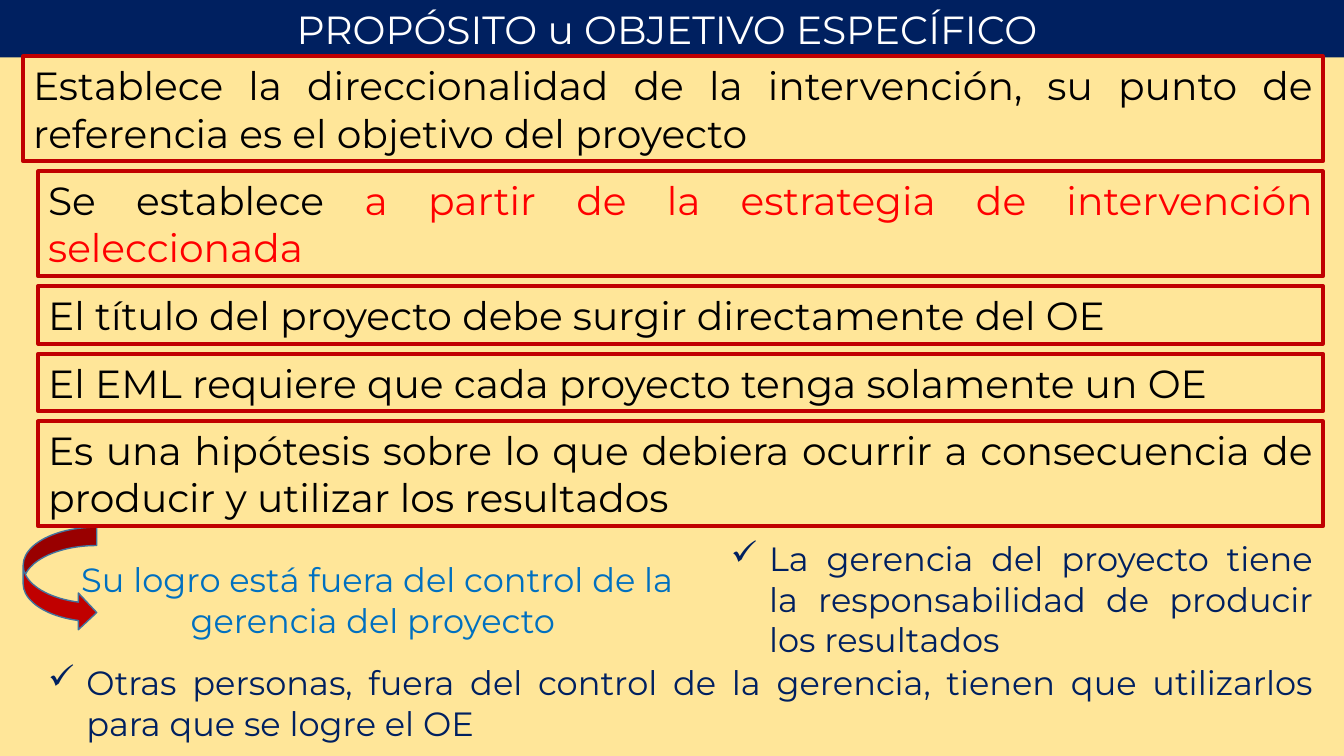
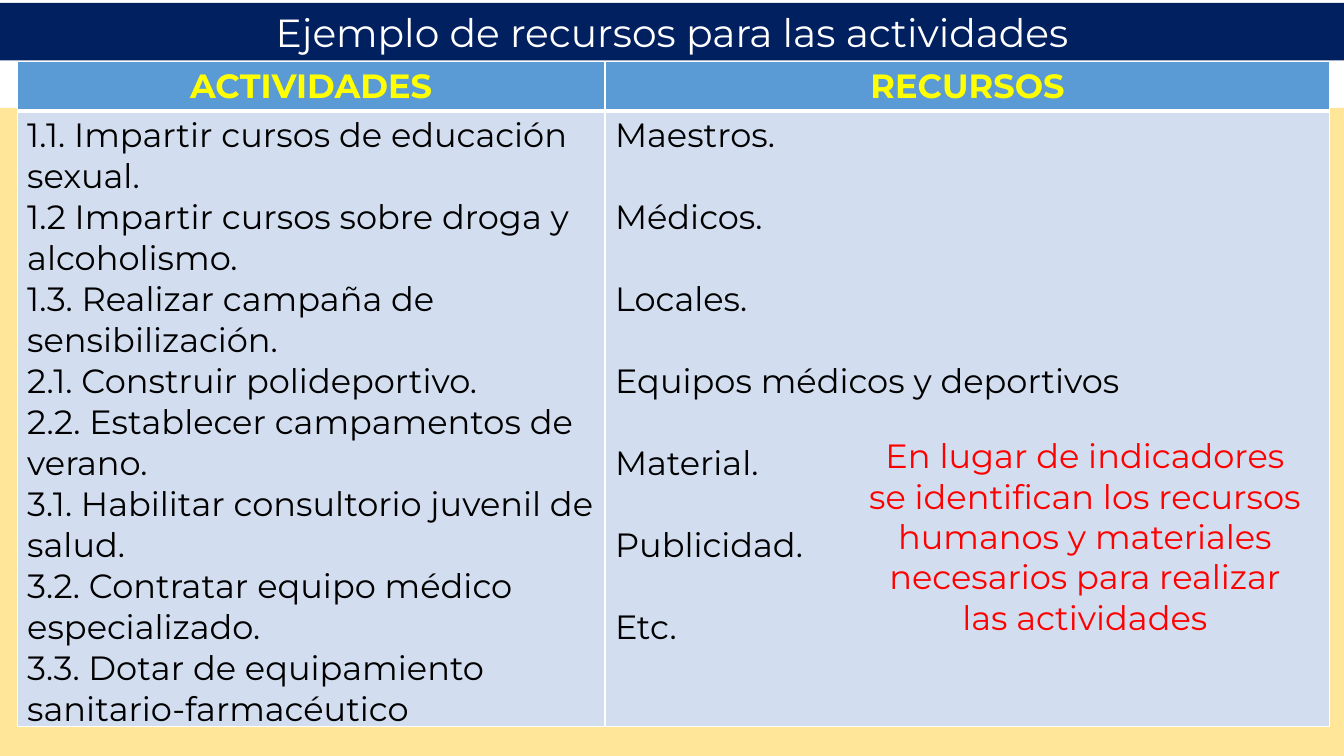
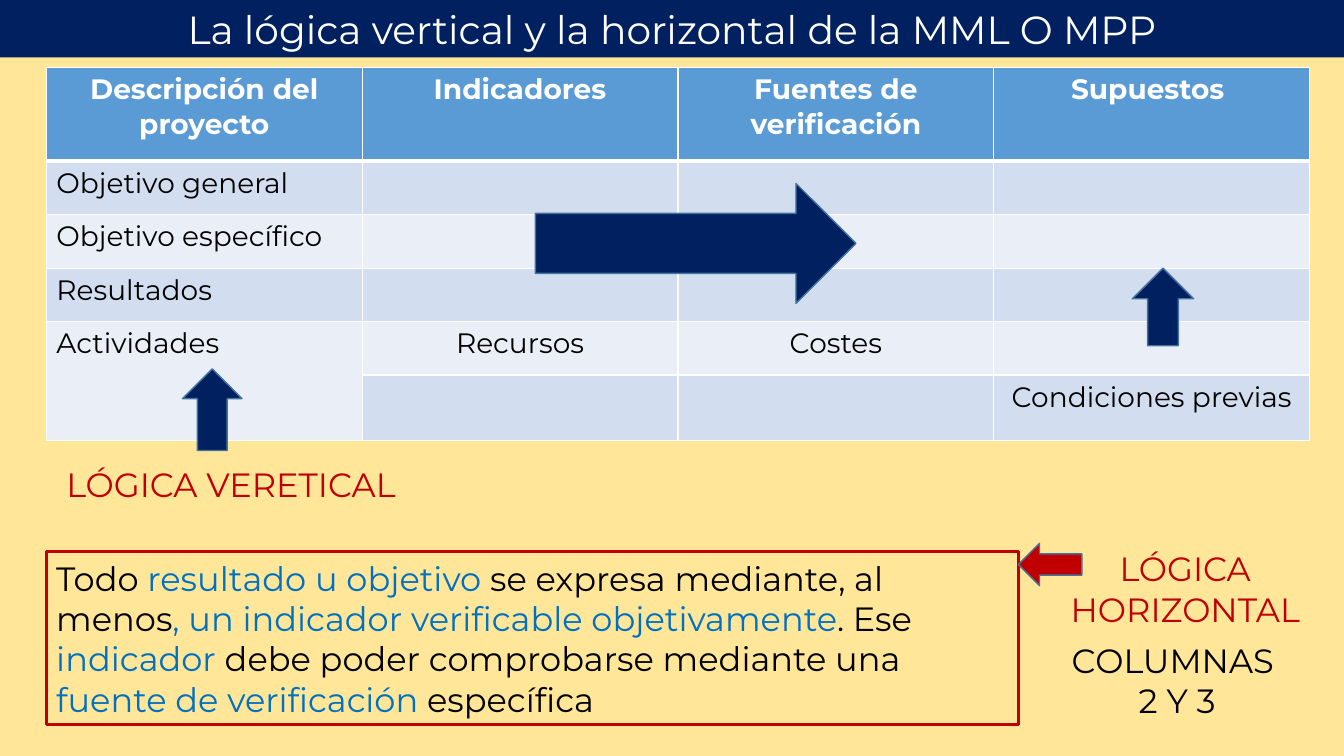
from collections import namedtuple

from lxml import etree
from pptx import Presentation
from pptx import util as u
from pptx.dml.color import RGBColor
from pptx.enum import shapes, text
from pptx.oxml import ns

NAVY = RGBColor(0x00, 0x20, 0x60)
CREAM = RGBColor(0xFF, 0xE6, 0x99)
WHITE = RGBColor(0xFF, 0xFF, 0xFF)
BLACK = RGBColor(0x00, 0x00, 0x00)
CRIMSON = RGBColor(0xC0, 0x00, 0x00)
RED = RGBColor(0xFF, 0x00, 0x00)
BLUE = RGBColor(0x00, 0x70, 0xC0)
YELLOW = RGBColor(0xFF, 0xFF, 0x00)
EDGE = RGBColor(0x43, 0x73, 0x9E)
HEAD = RGBColor(0x5B, 0x9B, 0xD5)
BAND = RGBColor(0xD2, 0xDE, 0xEF)
PALE = RGBColor(0xEA, 0xEF, 0xF7)
FONT = "Montserrat"
W, H = 13.33, 7.5
TITLE_H = 0.57
LEFT, CENTER, JUSTIFY = (text.PP_ALIGN.LEFT, text.PP_ALIGN.CENTER, text.PP_ALIGN.JUSTIFY)
SHAPE = shapes.MSO_SHAPE

Box = namedtuple("Box", "x y w h")


def emu(box):
    return [u.Inches(v) for v in box]


def part(box, x, y, w, h):
    return Box(box.x + x, box.y + y, w, h)


def write(tf, paras, size, color, align=LEFT, bold=False, before=0):
    tf.word_wrap = True
    for i, content in enumerate(paras):
        p = tf.paragraphs[0] if i == 0 else tf.add_paragraph()
        p.alignment = align
        p.font.name, p.font.size, p.font.bold = FONT, u.Pt(size), bold
        p.font.color.rgb = color
        if i and before:
            p.space_before = u.Pt(before)
        runs = [(content, None)] if isinstance(content, str) else content
        for words, tint in runs:
            r = p.add_run()
            r.text = words
            if tint is not None:
                r.font.color.rgb = tint


def add_shape(s, kind, box, fill=None, line=None, width=1):
    sp = s.shapes.add_shape(kind, *emu(box))
    sp.shadow.inherit = False
    if fill is None:
        sp.fill.background()
    else:
        sp.fill.solid()
        sp.fill.fore_color.rgb = fill
    if line is None:
        sp.line.fill.background()
    else:
        sp.line.color.rgb = line
        sp.line.width = u.Pt(width)
    return sp


def add_label(s, box, paras, color, align=CENTER):
    sp = s.shapes.add_textbox(*emu(box))
    write(sp.text_frame, paras, 24, color, align)
    return sp


def add_check(s, box, words):
    sp = add_label(s, box, [words], NAVY, JUSTIFY)
    pPr = sp.text_frame.paragraphs[0]._p.get_or_add_pPr()
    indent = u.Inches(0.38)
    pPr.set("marL", str(indent))
    pPr.set("indent", str(-indent))
    bullet = etree.Element(ns.qn("a:buChar"), char="✓")
    pPr.find(ns.qn("a:defRPr")).addprevious(bullet)


def add_frame(s, box, runs, size, width, align):
    sp = add_shape(s, SHAPE.RECTANGLE, box, None, CRIMSON, width)
    sp.text_frame.vertical_anchor = text.MSO_ANCHOR.MIDDLE
    write(sp.text_frame, [runs], size, BLACK, align)


def start_slide(prs, title, top=0, ground=0):
    s = prs.slides.add_slide(prs.slide_layouts[6])
    add_shape(s, SHAPE.RECTANGLE, Box(0, ground, W, H - ground), CREAM)
    band = add_shape(s, SHAPE.RECTANGLE, Box(0, top, W, TITLE_H), NAVY)
    band.text_frame.vertical_anchor = text.MSO_ANCHOR.MIDDLE
    write(band.text_frame, [title], 28, WHITE, CENTER)
    return s


def style_cell(cell, fill, top, bottom):
    tcPr = cell._tc.get_or_add_tcPr()
    for side, width in zip("LRTB", (1, 1, top, bottom)):
        ln = etree.SubElement(tcPr, ns.qn("a:ln" + side), w=str(u.Pt(width)))
        solid = etree.SubElement(ln, ns.qn("a:solidFill"))
        etree.SubElement(solid, ns.qn("a:srgbClr"), val=str(WHITE))
    cell.fill.solid()
    cell.fill.fore_color.rgb = fill


def add_grid(s, box, cols, rows):
    table = s.shapes.add_table(len(rows), len(cols), *emu(box)).table
    table.horz_banding = False
    for col, width in zip(table.columns, cols):
        col.width = u.Inches(width)
    for i, (row, height) in enumerate(zip(table.rows, rows)):
        row.height = u.Inches(height)
        fill = HEAD if i == 0 else (BAND if i % 2 else PALE)
        for cell in row.cells:
            style_cell(cell, fill, 3 if i == 1 else 1, 3 if i == 0 else 1)
    return table


def statements(s, box):
    items = [
        (2, 0, "Establece la direccionalidad de la intervención, su punto de "
               "referencia es el objetivo del proyecto"),
        (2, 0.15, [("Se establece ", None),
                   ("a partir de la estrategia de intervención seleccionada", RED)]),
        (1, 0.15, "El título del proyecto debe surgir directamente del OE"),
        (1, 0.15, "El EML requiere que cada proyecto tenga solamente un OE"),
        (2, 0.15, "Es una hipótesis sobre lo que debiera ocurrir a consecuencia "
                  "de producir y utilizar los resultados "),
    ]
    heights = {1: 0.57, 2: 1.04}
    gap = (box.h - sum(heights[n] for n, _, _ in items)) / (len(items) - 1)
    y = 0
    for lines, inset, words in items:
        h = heights[lines]
        add_frame(s, part(box, inset, y, box.w - inset, h), words, 28, 3, JUSTIFY)
        y += h + gap


def consequences(s, box):
    add_label(s, part(box, 0.3, 0.27, 6.42, 0.91),
              ["Su logro está fuera del control de la gerencia del proyecto "], BLUE)
    add_shape(s, SHAPE.CURVED_RIGHT_ARROW, part(box, 0, 0, 0.73, 1.03), CRIMSON, EDGE)
    add_check(s, part(box, 6.92, 0.06, 5.97, 1.31),
              "La gerencia del proyecto tiene la responsabilidad de producir los resultados")
    add_check(s, part(box, 0.15, 1.29, 12.74, 0.91),
              "Otras personas, fuera del control de la gerencia, tienen que "
              "utilizarlos para que se logre el OE")


def purpose_slide(prs):
    s = start_slide(prs, "PROPÓSITO u OBJETIVO ESPECÍFICO ")
    consequences(s, Box(0.23, 5.23, 12.89, 2.2))
    statements(s, Box(0.23, 0.56, 12.89, 4.66))


def resources_table(s, box):
    activities = [
        "1.1. Impartir cursos de educación sexual.",
        "1.2 Impartir cursos sobre droga y alcoholismo.",
        "1.3. Realizar campaña de sensibilización.",
        "2.1. Construir polideportivo.",
        "2.2. Establecer campamentos de verano.",
        "3.1. Habilitar consultorio juvenil de salud.",
        "3.2. Contratar equipo médico especializado.",
        "3.3. Dotar de equipamiento sanitario-farmacéutico",
    ]
    resources = ["Maestros.", "Médicos.", "Locales.", "Equipos médicos y deportivos",
                 "Material.", "Publicidad.", "Etc."]
    header = 0.49
    table = add_grid(s, box, [5.83, box.w - 5.83], [header, box.h - header])
    columns = [("ACTIVIDADES", activities, 0), ("RECURSOS", resources, 29.25)]
    for j, (name, entries, before) in enumerate(columns):
        head, body = table.cell(0, j), table.cell(1, j)
        for cell in (head, body):
            cell.margin_top, cell.margin_bottom = u.Inches(0.04), 0
        write(head.text_frame, [name], 24, YELLOW, CENTER, True)
        write(body.text_frame, entries, 24, BLACK, before=before)


def resources_slide(prs):
    s = start_slide(prs, "Ejemplo de recursos para las actividades", 0.03, 1.07)
    resources_table(s, Box(0.17, 0.61, 13.02, 6.6))
    add_label(s, Box(8.48, 4.27, 4.56, 2.52),
              ["En lugar de indicadores se identifican los recursos humanos y "
               "materiales necesarios para realizar las actividades"], RED)


def logic_table(s, box):
    rows = [0.93] + [0.53] * 4 + [0.65]
    content = [
        ["Descripción del proyecto", "Indicadores", "Fuentes de verificación", "Supuestos "],
        ["Objetivo general"],
        ["Objetivo específico"],
        ["Resultados"],
        ["Actividades", "Recursos", "Costes"],
        ["", "", "", "Condiciones previas"],
    ]
    table = add_grid(s, box, [box.w / 4] * 4, rows)
    table.cell(4, 0).merge(table.cell(5, 0))
    for i, line in enumerate(content):
        for j, words in enumerate(line):
            if words:
                write(table.cell(i, j).text_frame, [words], 20,
                      BLACK if i else WHITE, CENTER if j or not i else LEFT, i == 0)


def logic_arrows(s, box):
    arrows = [
        (SHAPE.UP_ARROW, 1.35, 2.99, 0.59, 0.81),
        (SHAPE.UP_ARROW, 10.77, 1.99, 0.61, 0.77),
        (SHAPE.RIGHT_ARROW, 4.85, 1.15, 3.18, 1.19),
    ]
    for kind, *place in arrows:
        add_shape(s, kind, part(box, *place), NAVY, EDGE)


def horizontal_logic(s, box):
    runs = [
        ("Todo ", None), ("resultado u objetivo ", BLUE),
        ("se expresa mediante, al menos", None),
        (", un indicador verificable objetivamente", BLUE),
        (". Ese ", None), ("indicador", BLUE),
        (" debe poder comprobarse mediante una ", None),
        ("fuente de verificación ", BLUE), ("específica", None),
    ]
    add_frame(s, part(box, 0, 0.08, 9.64, 1.72), runs, 24, 2.25, LEFT)
    add_label(s, part(box, 9.91, 0, 2.77, 0.91), ["LÓGICA HORIZONTAL"], CRIMSON)
    add_shape(s, SHAPE.LEFT_ARROW, part(box, 9.64, 0, 0.63, 0.42), CRIMSON, EDGE)
    add_label(s, part(box, 9.91, 0.91, 2.61, 0.91), ["COLUMNAS ", "2 Y 3"], BLACK)


def logic_slide(prs):
    s = start_slide(prs, "La lógica vertical y la horizontal de la MML O MPP")
    matrix = Box(0.46, 0.67, 12.53, 3.7)
    logic_table(s, matrix)
    logic_arrows(s, matrix)
    add_label(s, Box(0.56, 4.55, 3.97, 0.5), ["LÓGICA VERETICAL"], CRIMSON, LEFT)
    horizontal_logic(s, Box(0.46, 5.39, 12.68, 1.82))


def main():
    prs = Presentation()
    prs.slide_width, prs.slide_height = u.Inches(W), u.Inches(H)
    for build in (purpose_slide, resources_slide, logic_slide):
        build(prs)
    prs.save("out.pptx")


if __name__ == "__main__":
    main()
